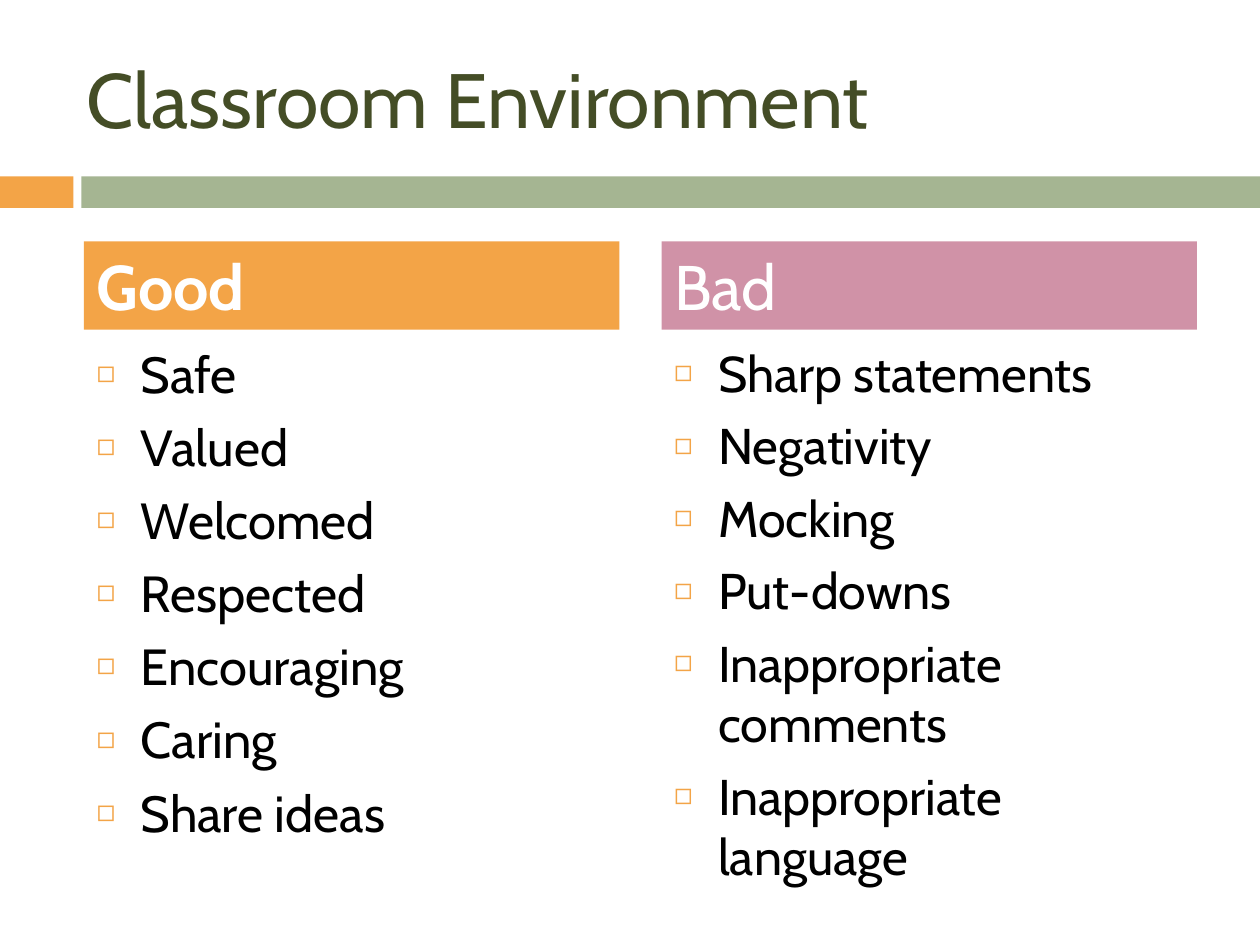
from lxml import etree
from pptx import Presentation
from pptx.dml.color import RGBColor
from pptx.enum import shapes, text
from pptx.oxml import ns
from pptx.util import Pt

ORANGE = RGBColor(0xF3, 0xA4, 0x47)
GREEN = RGBColor(0xA5, 0xB5, 0x92)
PINK = RGBColor(0xD0, 0x92, 0xA7)
OLIVE = RGBColor(0x44, 0x4D, 0x26)
WHITE = RGBColor(0xFF, 0xFF, 0xFF)
BLACK = RGBColor(0, 0, 0)

FONT = "Cabin"
WIDTH, HEIGHT = 720, 540
COMPARISON_LAYOUT = 4
HEADER_HEIGHT, HEADER_GAP = 50.4, 3.6
INDENT = 25.2

GOOD = ["Safe", "Valued", "Welcomed", "Respected", "Encouraging", "Caring",
        "Share ideas"]
BAD = ["Sharp statements", "Negativity", "Mocking", "Put-downs",
       "Inappropriate comments", "Inappropriate language"]


def place(shape, box):
    for name, value in zip(("left", "top", "width", "height"), box):
        setattr(shape, name, Pt(value))


def fill_solid(shape, color):
    shape.fill.solid()
    shape.fill.fore_color.rgb = color


def write(shape, lines, anchor, size, color, bold=False, space_before=0):
    """Fill a placeholder with one formatted paragraph per line."""
    frame = shape.text_frame
    frame.text = "\n".join(lines)
    frame_format = {"word_wrap": True, "vertical_anchor": anchor,
                    "auto_size": text.MSO_AUTO_SIZE.NONE}
    for name, value in frame_format.items():
        setattr(frame, name, value)
    paragraph_format = {"alignment": text.PP_ALIGN.LEFT,
                        "space_before": Pt(space_before)}
    font_format = {"name": FONT, "size": Pt(size), "bold": bold}
    for paragraph in frame.paragraphs:
        for name, value in paragraph_format.items():
            setattr(paragraph, name, value)
        for run in paragraph.runs:
            for name, value in font_format.items():
                setattr(run.font, name, value)
            run.font.color.rgb = color


def add_bullet(paragraph):
    """Give a paragraph a small orange square and a hanging indent."""
    properties = paragraph._p.get_or_add_pPr()
    properties.set("marL", str(Pt(INDENT)))
    properties.set("indent", str(-Pt(INDENT)))
    color = etree.SubElement(properties, ns.qn("a:buClr"))
    etree.SubElement(color, ns.qn("a:srgbClr"), val=str(ORANGE))
    etree.SubElement(properties, ns.qn("a:buSzPct"), val="60000")
    etree.SubElement(properties, ns.qn("a:buChar"), char="◻")


def add_title(slide, box):
    place(slide.shapes.title, box)
    write(slide.shapes.title, ["Classroom Environment"],
          text.MSO_ANCHOR.MIDDLE, 44, OLIVE)


def add_band(slide, box):
    """Draw a short orange bar and a long green one, side by side."""
    left, top, width, height = box
    short, gap = 42, 4.5
    start = short + gap
    for offset, bar_width, color in ((0, short, ORANGE),
                                     (start, width - start, GREEN)):
        bar = slide.shapes.add_shape(shapes.MSO_SHAPE.RECTANGLE, 0, 0, 0, 0)
        place(bar, (left + offset, top, bar_width, height))
        bar.shadow.inherit = False
        bar.line.fill.background()
        fill_solid(bar, color)


def add_column(header, body, box, heading, items, color, bold, size):
    left, top, width, height = box
    # Coloured heading
    place(header, (left, top, width, HEADER_HEIGHT))
    fill_solid(header, color)
    write(header, [heading], text.MSO_ANCHOR.MIDDLE, 36, WHITE, bold, 7)
    # Bulleted list
    offset = HEADER_HEIGHT + HEADER_GAP
    place(body, (left, top + offset, width, height - offset))
    write(body, items, text.MSO_ANCHOR.TOP, size, BLACK, space_before=7)
    for paragraph in body.text_frame.paragraphs:
        add_bullet(paragraph)


def main():
    presentation = Presentation()
    presentation.slide_width, presentation.slide_height = Pt(WIDTH), Pt(HEIGHT)
    layout = presentation.slide_layouts[COMPARISON_LAYOUT]
    slide = presentation.slides.add_slide(layout)
    holders = slide.placeholders

    add_band(slide, (0, 100.8, WIDTH, 18))
    add_title(slide, (42, 21.6, 642, 68.4))
    add_column(holders[1], holders[2], (48, 138, 306, 354),
               "Good", GOOD, ORANGE, True, 29)
    add_column(holders[3], holders[4], (378, 138, 306, 366),
               "Bad", BAD, PINK, False, 28.7)

    presentation.save("out.pptx")


if __name__ == "__main__":
    main()
